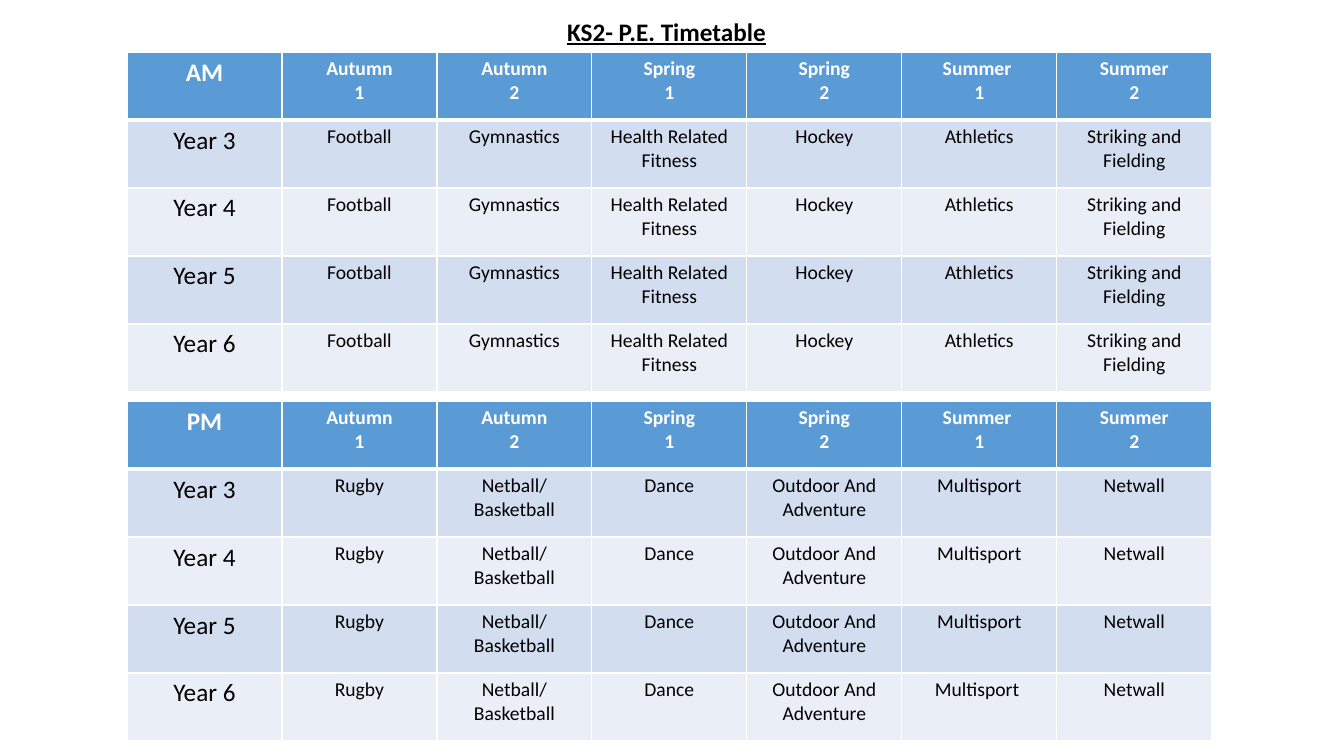
import pptx
import pptx.dml.color
import pptx.enum.text
import pptx.oxml
import pptx.oxml.ns
import pptx.util

PX = 914400 / 100.8
THEME = {
    "font": "Calibri", "large": 18, "small": 14,
    "text": "000000", "white": "FFFFFF",
    "header": "5B9BD5", "bands": ("D2DEEF", "EAEFF7"),
    "line": 1, "header_line": 3,
}
LEFT, COLUMN, ROW = 127, 155, 68
TERMS = ["Autumn\n1", "Autumn\n2", "Spring\n1", "Spring\n2", "Summer \n1", "Summer\n2"]
YEARS = ("Year 3", "Year 4", "Year 5", "Year 6")
SESSIONS = (
    ("AM", 52, ["Football", "Gymnastics", "Health Related Fitness",
                "Hockey", "Athletics", "Striking and Fielding"]),
    ("PM", 401, ["Rugby", "Netball/ Basketball", "Dance",
                 "Outdoor And Adventure", "Multisport", "Netwall"]),
)


def px(n):
    return pptx.util.Emu(round(n * PX))


def add_run(p, text, size, color, bold):
    r = p.add_run()
    r.text = text
    r.font.name = THEME["font"]
    r.font.size = pptx.util.Pt(size)
    r.font.bold = bold
    r.font.color.rgb = pptx.dml.color.RGBColor.from_string(color)
    return r


prs = pptx.Presentation()
prs.slide_width, prs.slide_height = px(1344), px(756)
s = prs.slides.add_slide(prs.slide_layouts[5])

title = s.shapes.title
title.left, title.top, title.width, title.height = px(557), px(11), px(381), px(40)
tf = title.text_frame
tf.word_wrap = True
tf.auto_size = pptx.enum.text.MSO_AUTO_SIZE.NONE
tf.vertical_anchor = pptx.enum.text.MSO_ANCHOR.TOP
p = tf.paragraphs[0]
p.alignment = pptx.enum.text.PP_ALIGN.LEFT
r = add_run(p, "KS2- P.E. Timetable", THEME["large"], THEME["text"], True)
r.font.underline = True

for session, top, sports in SESSIONS:
    rows = [[session] + TERMS] + [[year] + sports for year in YEARS]
    if session == "PM":
        rows[-1][5] = "Multisport "
    table = s.shapes.add_table(len(rows), len(rows[0]), px(LEFT), px(top),
                               px(COLUMN * len(rows[0])), px(ROW * len(rows))).table
    for column in table.columns:
        column.width = px(COLUMN)

    for i, row in enumerate(rows):
        table.rows[i].height = px(ROW)
        header = i == 0
        fill = THEME["header"] if header else THEME["bands"][(i - 1) % 2]
        color = THEME["white"] if header else THEME["text"]
        widths = {"L": THEME["line"], "R": THEME["line"],
                  "T": THEME["header_line"] if i == 1 else THEME["line"],
                  "B": THEME["header_line"] if header else THEME["line"]}
        for j, text in enumerate(row):
            cell = table.cell(i, j)
            cell.fill.solid()
            cell.fill.fore_color.rgb = pptx.dml.color.RGBColor.from_string(fill)
            tf = cell.text_frame
            for k, line in enumerate(text.split("\n")):
                p = tf.add_paragraph() if k else tf.paragraphs[0]
                p.alignment = pptx.enum.text.PP_ALIGN.CENTER
                add_run(p, line, THEME["small"] if j else THEME["large"], color, header)
            tcPr = cell._tc.get_or_add_tcPr()
            for k, (side, width) in enumerate(widths.items()):
                tcPr.insert(k, pptx.oxml.parse_xml(
                    f'<a:ln{side} {pptx.oxml.ns.nsdecls("a")} w="{pptx.util.Pt(width)}">'
                    f'<a:solidFill><a:srgbClr val="{THEME["white"]}"/></a:solidFill></a:ln{side}>'))

prs.save("out.pptx")
